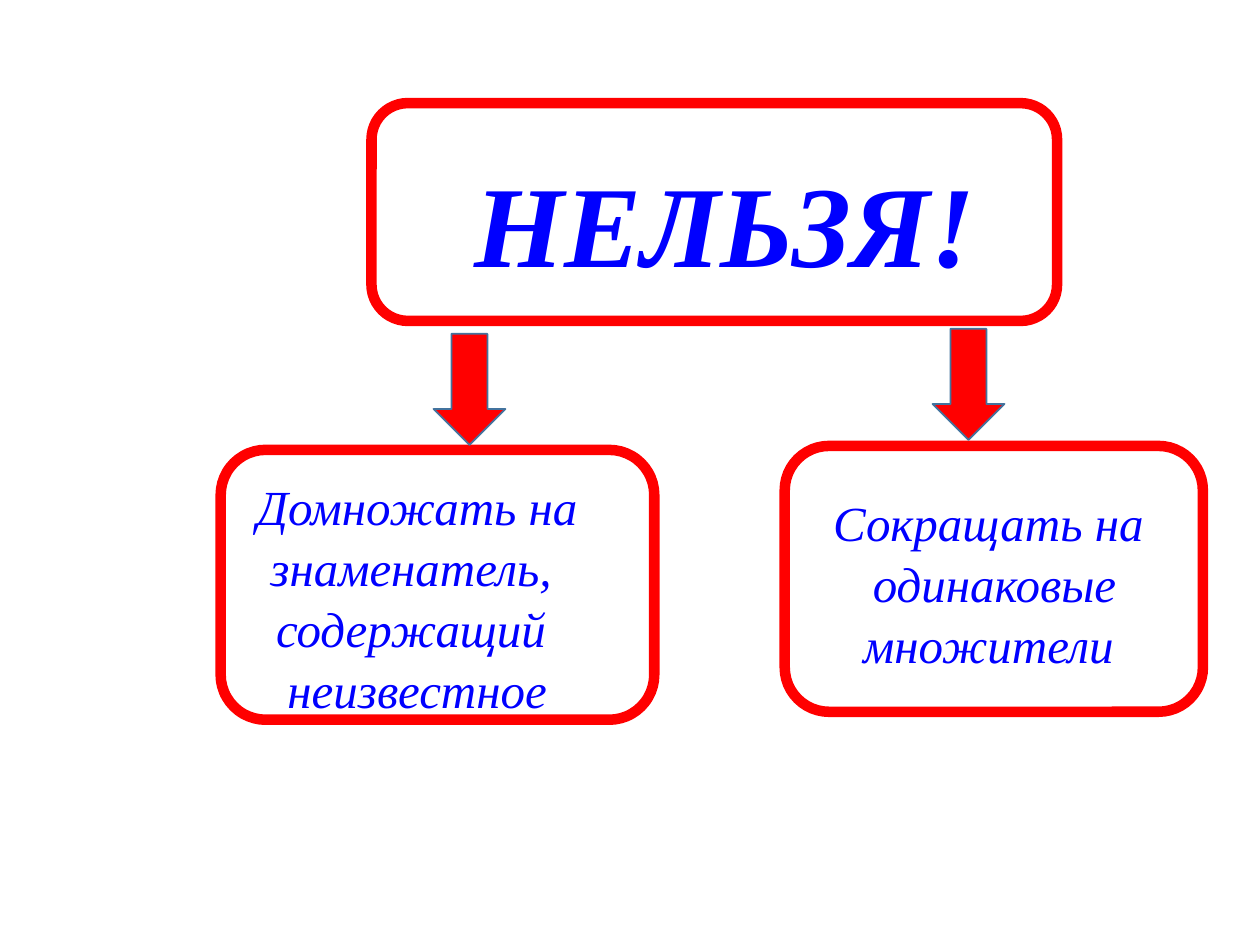
"""Build a slide on two moves that are not allowed with equations."""
import pptx
import pptx.util
import pptx.dml.color
import pptx.enum.shapes
import pptx.enum.text

Cm, Pt = pptx.util.Cm, pptx.util.Pt
Kind = pptx.enum.shapes.MSO_SHAPE
Text = pptx.enum.text

HUES = {"red": "FF0000", "blue": "0000FF", "edge": "43739E"}
TITLE = (["НЕЛЬЗЯ!"], (9.3, 2.82, 10.64, 3.05))
NOTES = [
    (["Домножать на", "знаменатель, ", "содержащий ", "неизвестное"],
     (4.37, 9.42, 8.08, 5.05)),
    (["Сокращать на", " одинаковые", "множители"],
     (16.51, 9.75, 6.83, 3.84)),
]
BOXES = [(7.49, 2.08, 13.82, 4.39), (4.45, 9.07, 8.74, 5.44), (15.82, 8.99, 8.43, 5.36)]
ARROWS = [(8.74, 6.73, 1.45, 2.24), (18.8, 6.63, 1.45, 2.24)]
FONT = {"name": "Times New Roman", "italic": True}
FRAME = {"word_wrap": True, "auto_size": Text.MSO_AUTO_SIZE.NONE,
         "vertical_anchor": Text.MSO_ANCHOR.TOP,
         "margin_left": Cm(0.25), "margin_right": Cm(0.25),
         "margin_top": Cm(0.13), "margin_bottom": Cm(0.13)}


def put(item, values):
    for name, value in values.items():
        setattr(item, name, value)


def hue(name):
    return pptx.dml.color.RGBColor.from_string(HUES[name])


def draw(slide, kind, place, line, width, fill=None):
    shape = slide.shapes.add_shape(kind, *map(Cm, place))
    shape.shadow.inherit = False
    shape.line.color.rgb = hue(line)
    shape.line.width = Pt(width)
    if fill:
        shape.fill.solid()
        shape.fill.fore_color.rgb = hue(fill)
    else:
        shape.fill.background()


def write(shape, lines, place, size, bold=False):
    put(shape, dict(zip(("left", "top", "width", "height"), map(Cm, place))))
    frame = shape.text_frame
    frame.text = "\n".join(lines)
    put(frame, FRAME)
    for par in frame.paragraphs:
        put(par, {"alignment": Text.PP_ALIGN.CENTER, "line_spacing": 1.04})
        for run in par.runs:
            put(run.font, {**FONT, "size": Pt(size), "bold": bold})
            run.font.color.rgb = hue("blue")


def main():
    deck = pptx.Presentation()
    put(deck, {"slide_width": Cm(25.4), "slide_height": Cm(19.05)})
    slide = deck.slides.add_slide(deck.slide_layouts[5])
    for place in BOXES:
        draw(slide, Kind.FLOWCHART_ALTERNATE_PROCESS, place, "red", 6)
    write(slide.shapes.title, *TITLE, 66, True)
    for lines, place in NOTES:
        write(slide.shapes.add_textbox(0, 0, 0, 0), lines, place, 28)
    for place in ARROWS:
        draw(slide, Kind.DOWN_ARROW, place, "edge", 1, "red")
    deck.save("out.pptx")


if __name__ == "__main__":
    main()
